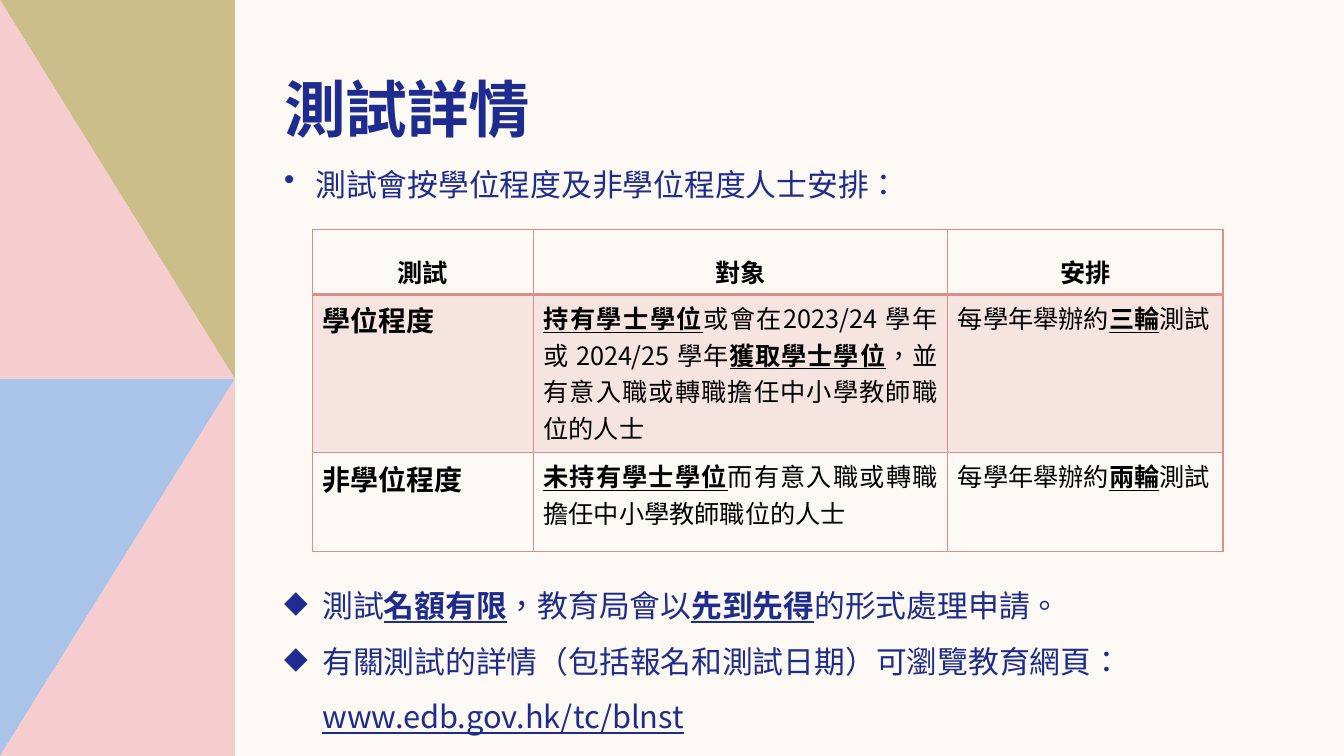
import lxml.etree
import pptx
import pptx.dml.color
import pptx.enum.lang
import pptx.enum.text
import pptx.oxml.ns
import pptx.util

Inches = pptx.util.Inches
Pt = pptx.util.Pt
ALIGN = pptx.enum.text.PP_ALIGN
ANCHOR = pptx.enum.text.MSO_ANCHOR
LANG = pptx.enum.lang.MSO_LANGUAGE_ID.TRADITIONAL_CHINESE

COLORS = {"cream": "FDFAF6", "blue": "AAC3E8", "pink": "F5CDCE",
          "olive": "CCBE89", "navy": "1F2C8F", "rose": "DE8C8C",
          "black": "000000"}
SANS = "Noto Sans CJK SC"

# Text between asterisks is bold and underlined, between underscores underlined
INTRO = ["測試會按學位程度及非學位程度人士安排："]
NOTES = ["測試*名額有限*，教育局會以*先到先得*的形式處理申請。",
         "有關測試的詳情（包括報名和測試日期）可瀏覽教育網頁："
         "_www.edb.gov.hk/tc/blnst_"]
HEADS = ["測試", "對象", "安排"]
ROWS = [
    ["學位程度",
     "*持有學士學位*或會在2023/24 學年或 2024/25 學年*獲取學士學位*"
     "，並有意入職或轉職擔任中小學教師職位的人士",
     "每學年舉辦約*三輪*測試"],
    ["非學位程度",
     "*未持有學士學位*而有意入職或轉職擔任中小學教師職位的人士",
     "每學年舉辦約*兩輪*測試"],
]


def rgb(name):
    return pptx.dml.color.RGBColor.from_string(COLORS[name])


def add_tag(parent, tag, **attrs):
    return lxml.etree.SubElement(parent, pptx.oxml.ns.qn(tag), attrs)


def set_all(target, values):
    for name, value in values.items():
        setattr(target, name, value)


def add_run(para, text, size, color, face, bold, line):
    run = para.add_run()
    run.text = text
    set_all(run.font, {"size": Pt(size), "name": face, "bold": bold,
                       "underline": line, "language_id": LANG})
    run.font.color.rgb = rgb(color)
    add_tag(run.font._element, "a:ea", typeface=face)


def add_marked(para, text, size, color, face=SANS, bold=False):
    for i, part in enumerate(text.split("*")):
        for j, piece in enumerate(part.split("_")):
            if piece:
                strong, under = i % 2 == 1, j % 2 == 1
                add_run(para, piece, size, color, face,
                        bold or strong, strong or under)


def add_box(slide, box, anchor=ANCHOR.TOP):
    frame = slide.shapes.add_textbox(*map(Inches, box)).text_frame
    set_all(frame, {"word_wrap": True, "vertical_anchor": anchor})
    return frame


def add_list(slide, box, items, mark, indent, style):
    frame = add_box(slide, box)
    for i, item in enumerate(items):
        para = frame.add_paragraph() if i else frame.paragraphs[0]
        set_all(para, style)
        props = para._p.get_or_add_pPr()
        props.set("marL", str(Inches(indent)))
        props.set("indent", str(-Inches(indent)))
        add_tag(props, "a:buChar", char=mark)
        add_marked(para, item, 22, "navy")


def add_patch(slide, color, points):
    points = [(Inches(x), Inches(y)) for x, y in points]
    maker = slide.shapes.build_freeform(*points[0])
    maker.add_line_segments(points[1:], close=True)
    patch = maker.convert_to_shape()
    patch.shadow.inherit = False
    patch.fill.solid()
    patch.fill.fore_color.rgb = rgb(color)
    patch.line.fill.background()


def add_edges(cell, base):
    props = cell._tc.get_or_add_tcPr()
    for side, width in {"L": 1, "R": 1, "T": 1, "B": base}.items():
        edge = add_tag(props, "a:ln" + side, w=str(Pt(width)))
        fill = add_tag(edge, "a:solidFill")
        add_tag(fill, "a:srgbClr", val=COLORS["rose"])


def tint(cell, color, alpha):
    cell.fill.solid()
    cell.fill.fore_color.rgb = rgb(color)
    for node in cell._tc.tcPr.iter(pptx.oxml.ns.qn("a:srgbClr")):
        if node.getparent().getparent() is cell._tc.tcPr:
            add_tag(node, "a:alpha", val=str(alpha * 1000))


def add_grid(slide):
    widths, heights = [2.19, 4.11, 2.73], [0.64, 1.57, 0.98]
    table = slide.shapes.add_table(
        3, 3, Inches(3.1), Inches(2.28),
        Inches(sum(widths)), Inches(sum(heights))).table
    set_all(table, {"first_row": False, "horz_banding": False})
    for column, width in zip(table.columns, widths):
        column.width = Inches(width)
    for row, height in zip(table.rows, heights):
        row.height = Inches(height)
    for r, texts in enumerate([HEADS] + ROWS):
        for c, text in enumerate(texts):
            cell = table.cell(r, c)
            add_edges(cell, 1 if r else 2)
            if r == 1:
                tint(cell, "rose", 20)
            else:
                cell.fill.background()
            para = cell.text_frame.paragraphs[0]
            if r == 0:
                set_all(para, {"alignment": ALIGN.CENTER,
                               "line_spacing": 1.5})
            elif c == 1:
                para.alignment = ALIGN.JUSTIFY
            size = 20 if r and c == 0 else 18
            add_marked(para, text, size, "black", bold=r == 0 or c == 0)


def main():
    deck = pptx.Presentation()
    set_all(deck, {"slide_width": Inches(13.33),
                   "slide_height": Inches(7.5)})
    slide = deck.slides.add_slide(deck.slide_layouts[6])
    slide.background.fill.solid()
    slide.background.fill.fore_color.rgb = rgb("cream")

    # Side band of four triangles
    side, mid, low = 2.33, 3.76, 7.5
    add_patch(slide, "blue", [(0, mid), (side, mid), (0, low)])
    add_patch(slide, "pink", [(side, mid), (side, low), (0, low)])
    add_patch(slide, "olive", [(0, 0), (side, 0), (side, mid)])
    add_patch(slide, "pink", [(0, 0), (side, mid), (0, mid)])

    # Title and lead line
    title = add_box(slide, (2.72, 0.52, 9.3, 0.97), ANCHOR.BOTTOM)
    add_marked(title.paragraphs[0], "測試詳情", 44, "navy",
               "Montserrat", True)
    add_list(slide, (2.72, 1.59, 9.57, 0.63), INTRO, "•", 0.31,
             {"space_before": Pt(3.6)})

    # Test levels and notes
    add_grid(slide)
    add_list(slide, (2.72, 5.59, 10.09, 1.7), NOTES, "◆", 0.38,
             {"line_spacing": 1.5})
    deck.save("out.pptx")


if __name__ == "__main__":
    main()
